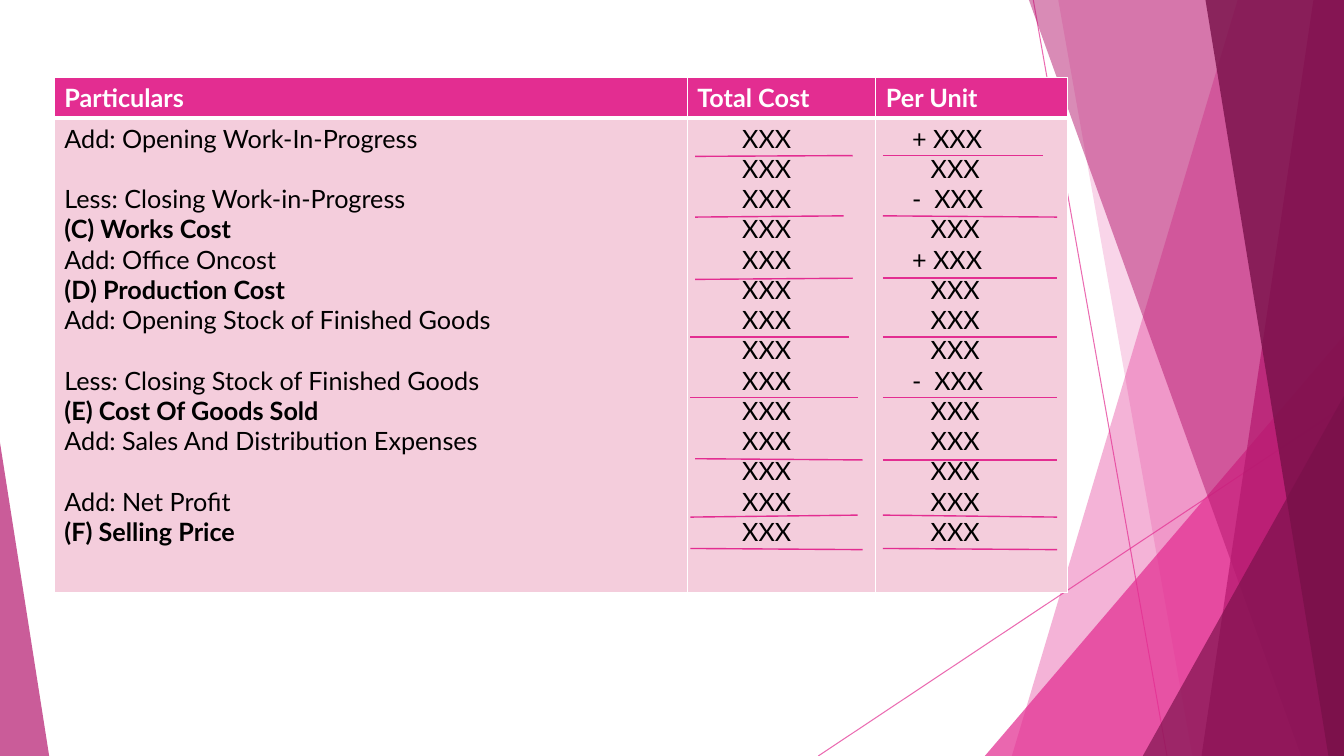
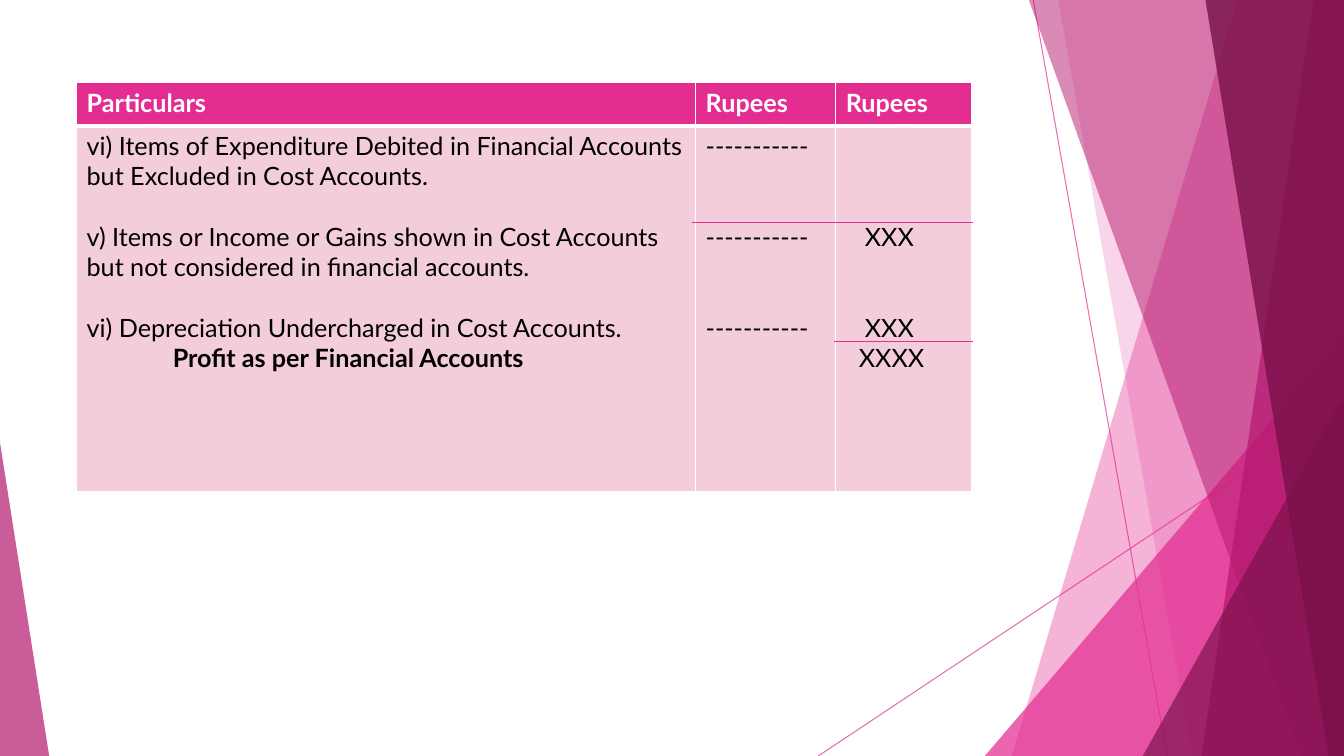
from lxml.etree import SubElement
from pptx import Presentation
from pptx.dml.color import RGBColor
from pptx.enum.shapes import MSO_CONNECTOR, MSO_SHAPE
from pptx.oxml.ns import qn
from pptx.util import Cm, Pt

WIDTH, HEIGHT = 33.87, 19.05
PINK, MAGENTA, PLUM = "E32D91", "B4186E", "781049"
BLUSH, WHITE, BLACK = "F4CDDC", "FFFFFF", "000000"
FONT, TEXT_SIZE, LINE_HEIGHT = "Lato", 18, 21.6


def rgb(value):
    return RGBColor.from_string(value)


def set_opacity(element, percent):
    for color in element.iter(qn("a:srgbClr")):
        SubElement(color, qn("a:alpha")).set("val", str(percent * 1000))


def add_text(frame, text, bold=False, color=BLACK, indent=0, gap=0):
    """Add one paragraph; gap counts the free lines above it."""
    paragraph = frame.paragraphs[0]
    if paragraph.runs:
        paragraph = frame.add_paragraph()
    properties = paragraph._p.get_or_add_pPr()
    properties.set("marL", str(Cm(indent)))
    properties.set("indent", "0")
    if gap:
        paragraph.space_before = Pt(LINE_HEIGHT * gap)
    run = paragraph.add_run()
    run.text = text
    font = run.font
    font.name, font.size, font.bold = FONT, Pt(TEXT_SIZE), bold
    font.color.rgb = rgb(color)


def add_rule(slide, x1, y1, x2, y2, weight=1, opacity=100):
    rule = slide.shapes.add_connector(
        MSO_CONNECTOR.STRAIGHT, Cm(x1), Cm(y1), Cm(x2), Cm(y2))
    rule.line.color.rgb = rgb(PINK)
    rule.line.width = Pt(weight)
    SubElement(rule._element.spPr, qn("a:effectLst"))
    if opacity < 100:
        set_opacity(rule._element.spPr, opacity)


# Translucent facets shared by the slides
def paint(shape, color, opacity):
    shape.shadow.inherit = False
    shape.fill.solid()
    shape.fill.fore_color.rgb = rgb(color)
    shape.line.fill.background()
    set_opacity(shape._element.spPr, opacity)


def add_band(slide, top_x, bottom_x, color, opacity):
    """A band from a slanted left edge to the right edge of the slide."""
    outline = slide.shapes.build_freeform(Cm(top_x), 0)
    corners = [(WIDTH, 0), (WIDTH, HEIGHT), (bottom_x, HEIGHT)]
    outline.add_line_segments([(Cm(x), Cm(y)) for x, y in corners], close=True)
    paint(outline.convert_to_shape(), color, opacity)


def add_corner(slide, left, top, width, apex, color, opacity):
    """A triangle standing on the bottom edge of the slide."""
    corner = slide.shapes.add_shape(
        MSO_SHAPE.ISOSCELES_TRIANGLE,
        Cm(left), Cm(top), Cm(width), Cm(HEIGHT - top))
    corner.adjustments[0] = apex
    paint(corner, color, opacity)


def add_facets(slide):
    add_rule(slide, 26.04, 0, 29.41, HEIGHT, weight=0.75, opacity=70)
    add_rule(slide, WIDTH, 10.24, 20.62, HEIGHT, weight=0.75, opacity=70)
    add_band(slide, 31.19, 25.5, PINK, 36)
    add_band(slide, 26.67, 30.05, PINK, 20)
    add_corner(slide, 24.82, 8.46, 9.05, 1, PINK, 72)
    add_band(slide, 25.93, 32.79, MAGENTA, 50)
    add_band(slide, 33.1, 30.28, MAGENTA, 70)
    add_band(slide, 30.38, 33.48, PLUM, 80)
    add_corner(slide, 28.8, 9.98, 5.07, 1, PLUM, 66)
    add_corner(slide, 0, 11.15, 1.24, 0, MAGENTA, 70)


# Account table with a header row and one tall body row
def style_cell(cell, fill, top=1, bottom=1):
    borders = {"a:lnL": 1, "a:lnR": 1, "a:lnT": top, "a:lnB": bottom}
    for tag, weight in borders.items():
        edge = SubElement(cell._tc.get_or_add_tcPr(), qn(tag))
        edge.set("w", str(Pt(weight)))
        edge_fill = SubElement(edge, qn("a:solidFill"))
        SubElement(edge_fill, qn("a:srgbClr")).set("val", WHITE)
    cell.fill.solid()
    cell.fill.fore_color.rgb = rgb(fill)


def add_account(slide, left, top, widths, heights, headings, columns, rules,
                skipped=(0, 0, 0)):
    """Rules are relative to the table; skipped counts free lines per column."""
    table = slide.shapes.add_table(
        2, len(widths), Cm(left), Cm(top),
        Cm(sum(widths)), Cm(sum(heights))).table
    table.horz_banding = False
    for row, height in zip(table.rows, heights):
        row.height = Cm(height)
    for index, (width, heading, entries) in enumerate(
            zip(widths, headings, columns)):
        table.columns[index].width = Cm(width)
        header, body = table.cell(0, index), table.cell(1, index)
        style_cell(header, PINK, bottom=3)
        style_cell(body, BLUSH, top=3)
        add_text(header.text_frame, heading, bold=True, color=WHITE)
        if skipped[index]:
            body.margin_top = Cm(0.13) + Pt(LINE_HEIGHT * skipped[index])
        for text, options in entries:
            add_text(body.text_frame, text, **options)
    for x1, y1, x2, y2 in rules:
        add_rule(slide, left + x1, top + y1, left + x2, top + y2)


def add_cost_sheet(slide):
    bold, spaced = {"bold": True}, {"gap": 1}
    particulars = [
        ("Add: Opening Work-In-Progress", {}),
        ("Less: Closing Work-in-Progress", spaced),
        ("(C) Works Cost", bold),
        ("Add: Office Oncost", {}),
        ("(D) Production Cost", bold),
        ("Add: Opening Stock of Finished Goods", {}),
        ("Less: Closing Stock of Finished Goods", spaced),
        ("(E) Cost Of Goods Sold", bold),
        ("Add: Sales And Distribution Expenses", {}),
        ("Add: Net Profit", spaced),
        ("(F) Selling Price", bold),
    ]
    amount = ("XXX", {"indent": 1.13})
    signed = {0: "+ XXX", 2: "-  XXX", 4: "+ XXX", 8: "-  XXX"}
    total_cost = [amount] * 14
    per_unit = [(signed[line], {"indent": 0.66}) if line in signed else amount
                for line in range(14)]

    # Start, left height, end, right height of each sum line
    total_rules = [
        (16.15, 1.98, 20.12, 1.96), (16.15, 3.51, 19.89, 3.48),
        (16.15, 5.08, 20.12, 5.05), (16.03, 6.53, 20.02, 6.53),
        (16.03, 8.05, 20.24, 8.05), (16.15, 9.6, 20.37, 9.63),
        (16.03, 11.07, 20.24, 11.02), (16.03, 11.86, 20.37, 11.89),
    ]
    unit_heights = [(1.96, 1.96), (3.48, 3.51), (5.05, 5.05), (6.53, 6.53),
                    (8.05, 8.05), (9.63, 9.63), (11.02, 11.07), (11.86, 11.89)]
    unit_rules = [(20.88, start, 25.27 if line else 24.92, end)
                  for line, (start, end) in enumerate(unit_heights)]
    add_account(slide, 1.37, 1.96, (15.95, 4.75, 4.83), (1.02, 11.96),
                ("Particulars", "Total Cost", "Per Unit"),
                (particulars, total_cost, per_unit), total_rules + unit_rules)


def add_reconciliation(slide):
    particulars = [
        ("vi) Items of Expenditure Debited in Financial Accounts "
         "but Excluded in Cost Accounts.", {}),
        ("v) Items or Income or Gains shown in Cost Accounts "
         "but not considered in financial accounts.", {"gap": 1}),
        ("vi) Depreciation Undercharged in Cost Accounts.", {"gap": 1}),
        ("Profit as per Financial Accounts", {"bold": True, "indent": 2.17}),
    ]
    dashes = "-" * 11
    items = [(dashes, {}), (dashes, {"gap": 2}), (dashes, {"gap": 2})]
    totals = [("XXX", {"indent": 0.48}), ("XXX", {"indent": 0.48, "gap": 2}),
              ("XXXX", {"indent": 0.33})]
    rules = [(15.52, 3.53, 22.58, 3.53), (19.1, 6.53, 22.58, 6.53)]
    add_account(slide, 1.93, 2.08, (15.6, 3.53, 3.43), (1.09, 9.22),
                ("Particulars", "Rupees", "Rupees"),
                (particulars, items, totals), rules, skipped=(0, 0, 3))


def main():
    deck = Presentation()
    deck.slide_width, deck.slide_height = Cm(WIDTH), Cm(HEIGHT)
    for add_content in (add_cost_sheet, add_reconciliation):
        slide = deck.slides.add_slide(deck.slide_layouts[6])
        add_facets(slide)
        add_content(slide)
    deck.save("out.pptx")


if __name__ == "__main__":
    main()
